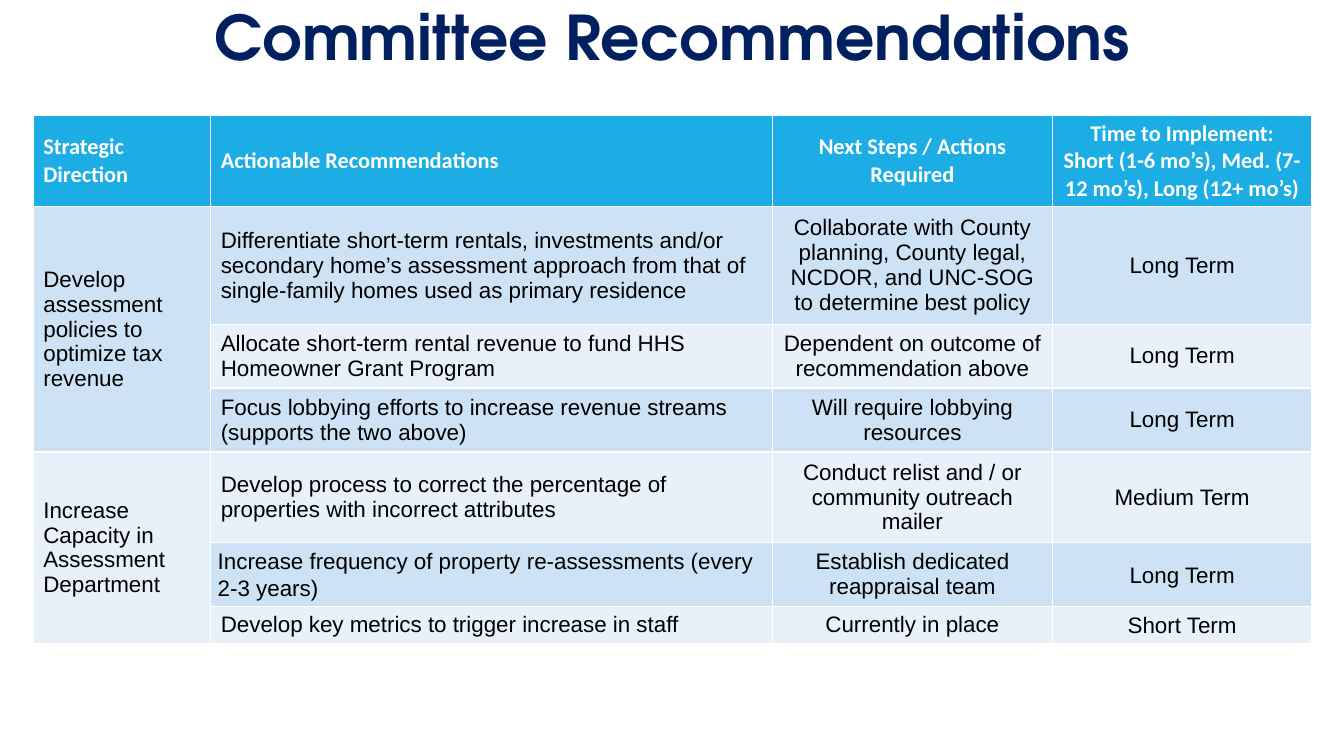
from pptx import Presentation
from pptx.dml.color import RGBColor
from pptx.enum.text import MSO_ANCHOR as Anchor, PP_ALIGN as Align
from pptx.util import Inches, Pt

COLORS = {
    "navy": "002060", "header": "1CADE4", "band": "CDE3F5",
    "pale": "E8F1FA", "white": "FFFFFF", "black": "000000",
}
COLUMN_WIDTHS = [1.76, 5.57, 2.78, 2.57]
ROW_HEIGHTS = [0.91, 1.09, 0.59, 0.59, 0.84, 0.59, 0.35]
HEADINGS = [
    "Strategic Direction",
    "Actionable Recommendations",
    "Next Steps / Actions Required",
    "Time to Implement:\nShort (1-6 mo’s), Med. (7-12 mo’s), Long (12+ mo’s)",
]
DIRECTIONS = [
    ("Develop assessment policies to optimize tax revenue", [
        ("Differentiate short-term rentals, investments and/or secondary home’s "
         "assessment approach from that of single-family homes used as primary residence",
         "Collaborate with County planning, County legal, NCDOR, and UNC-SOG "
         "to determine best policy", "Long Term"),
        ("Allocate short-term rental revenue to fund HHS Homeowner Grant Program",
         "Dependent on outcome of recommendation above", "Long Term"),
        ("Focus lobbying efforts to increase revenue streams (supports the two above)",
         "Will require lobbying resources", "Long Term"),
    ]),
    ("Increase Capacity in Assessment Department", [
        ("Develop process to correct the percentage of properties with incorrect attributes",
         "Conduct relist and / or community outreach mailer", "Medium Term"),
        ("Increase frequency of property re-assessments (every 2-3 years)",
         "Establish dedicated reappraisal team", "Long Term"),
        ("Develop key metrics to trigger increase in staff",
         "Currently in place", "Short Term"),
    ]),
]
TIGHT_CELLS = {(4, 3), (5, 1), (5, 3), (6, 3)}


def write_text(frame, text, *, font="Arial", size=16, color="black", bold=False,
               align=Align.LEFT, spacing=None):
    """Fill a text frame, one paragraph per line of text."""
    for index, line in enumerate(text.split("\n")):
        para = frame.add_paragraph() if index else frame.paragraphs[0]
        para.alignment = align
        if spacing:
            para.line_spacing = spacing
        span = para.add_run()
        span.text = line
        span.font.name = font
        span.font.size = Pt(size)
        span.font.bold = bold
        span.font.color.rgb = RGBColor.from_string(COLORS[color])


def add_title(page, text):
    """Add the centred slide title."""
    box = page.shapes.add_textbox(Inches(0.92), Inches(-0.04), Inches(11.5), Inches(0.88))
    box.text_frame.word_wrap = True
    box.text_frame.vertical_anchor = Anchor.MIDDLE
    write_text(box.text_frame, text, font="TeX Gyre Adventor", size=44, color="navy",
               bold=True, align=Align.CENTER, spacing=0.9)


def fill_cell(table, row, column, text, *, fill, **text_format):
    """Colour one table cell and write its text."""
    cell = table.cell(row, column)
    cell.fill.solid()
    cell.fill.fore_color.rgb = RGBColor.from_string(COLORS[fill])
    cell.vertical_anchor = Anchor.MIDDLE
    if (row, column) in TIGHT_CELLS:
        cell.margin_left = cell.margin_right = Inches(0.07)
        cell.margin_top = cell.margin_bottom = 0
        text_format["spacing"] = 1.07
    align = Align.CENTER if column >= 2 else Align.LEFT
    write_text(cell.text_frame, text, align=align, **text_format)


def add_recommendations(page):
    """Add the table of recommendations grouped by strategic direction."""
    table = page.shapes.add_table(
        len(ROW_HEIGHTS), len(COLUMN_WIDTHS), Inches(0.33), Inches(1.14),
        Inches(sum(COLUMN_WIDTHS)), Inches(sum(ROW_HEIGHTS))).table
    for column, width in zip(table.columns, COLUMN_WIDTHS):
        column.width = Inches(width)
    for row, height in zip(table.rows, ROW_HEIGHTS):
        row.height = Inches(height)
    for column, heading in enumerate(HEADINGS):
        fill_cell(table, 0, column, heading, fill="header", font="Calibri",
                  color="white", bold=True)
    row = 1
    for direction, actions in DIRECTIONS:
        table.cell(row, 0).merge(table.cell(row + len(actions) - 1, 0))
        fill_cell(table, row, 0, direction, fill="band" if row % 2 else "pale")
        for action in actions:
            for column, text in enumerate(action, start=1):
                fill_cell(table, row, column, text, fill="band" if row % 2 else "pale")
            row += 1


def main():
    """Build and save the deck."""
    deck = Presentation()
    deck.slide_width, deck.slide_height = Inches(13.33), Inches(7.5)
    page = deck.slides.add_slide(deck.slide_layouts[6])
    add_title(page, "Committee Recommendations")
    add_recommendations(page)
    deck.save("out.pptx")


if __name__ == "__main__":
    main()
